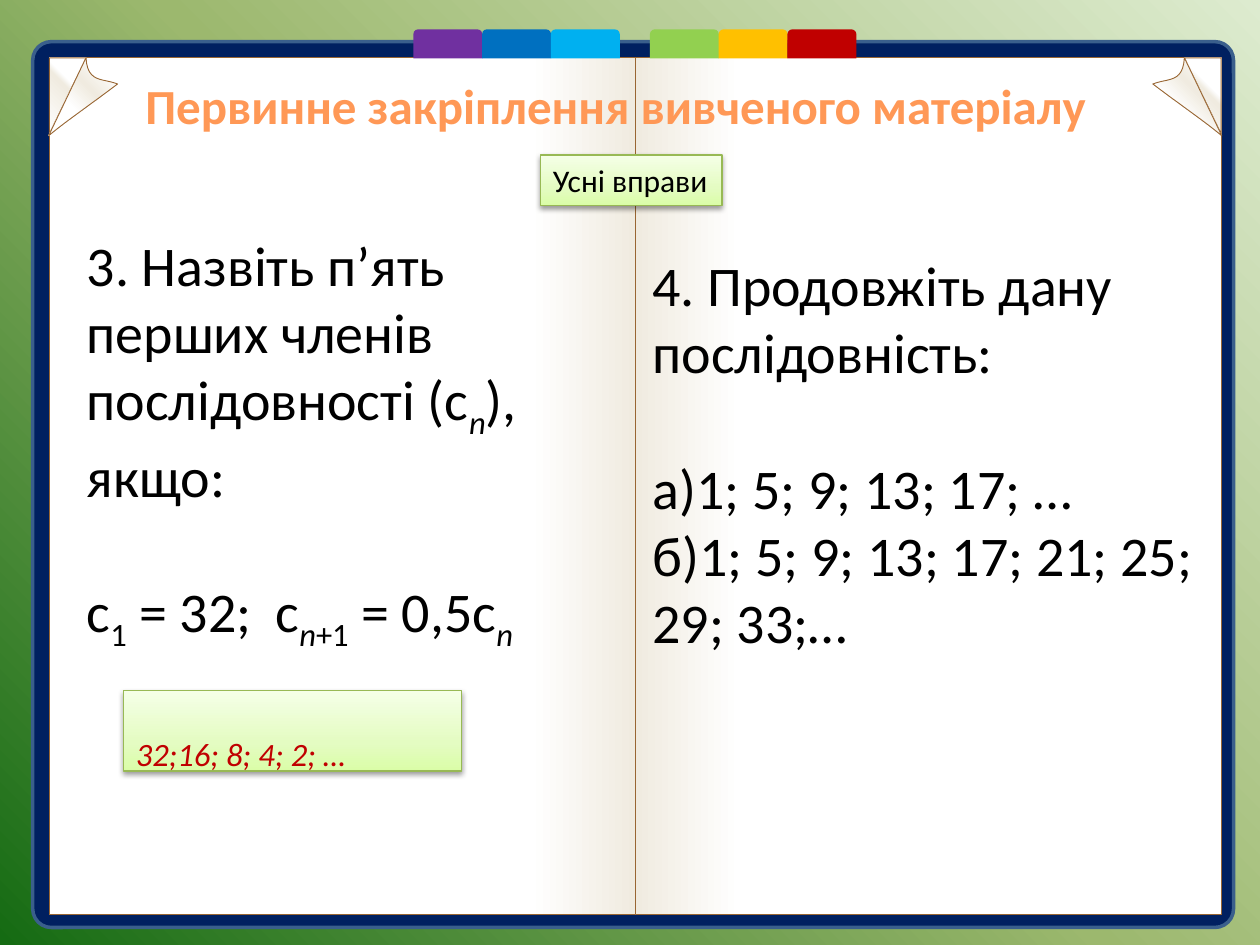
from dataclasses import dataclass

import pptx
import pptx.dml.color
import pptx.enum.shapes
import pptx.enum.text
import pptx.oxml
import pptx.oxml.ns
import pptx.util
from lxml import etree

Pt = pptx.util.Pt
RGB = pptx.dml.color.RGBColor.from_string
SHAPE = pptx.enum.shapes.MSO_SHAPE
ALIGN = pptx.enum.text.PP_ALIGN
ANCHOR = pptx.enum.text.MSO_ANCHOR
AUTO = pptx.enum.text.MSO_AUTO_SIZE
qn = pptx.oxml.ns.qn


@dataclass(frozen=True)
class Theme:
    font: str = "Calibri"
    title_size: float = 28
    body_size: float = 32
    badge_size: float = 18
    gap: float = 39
    title: str = "FF9856"
    text: str = "000000"
    answer: str = "C00000"
    cover: str = "002060"
    cover_line: str = "3A5F8C"
    page_line: str = "996633"
    badge_line: str = "98B955"
    backdrop: tuple = ((0, "DDEBCF"), (50, "9CB86E"), (100, "156B13"))
    page: tuple = ((0, "FFFFFF"), (82, "FFFFFF"), (100, "F0EBE0"))
    corner: tuple = ((0, "FFFFFF"), (57, "F0EBE0"), (65, "FFFFFF"))
    fold: tuple = ((12, "FFFFFF"), (40, "F0EBE0"), (65, "FFFFFF"))
    badge: tuple = ((0, "DAFDA7"), (35, "E4FCC2"), (100, "F5FFE7"))
    tabs: tuple = (("7030A0", "0070C0", "00B0F0"), ("92D050", "FFC000", "C00000"))


T = Theme()
SPINE = 363


def set_gradient(owner, fill, stops, angle):
    fill.gradient()
    grad = owner.element.find(".//" + qn("a:gradFill"))
    gs_list = grad.find(qn("a:gsLst"))
    for gs in list(gs_list):
        gs_list.remove(gs)
    for pos, color in stops:
        gs = etree.SubElement(gs_list, qn("a:gs"), pos=str(pos * 1000))
        etree.SubElement(gs, qn("a:srgbClr"), val=color)
    grad.find(qn("a:lin")).set("ang", str(angle * 60000))


def style(sp, fill, line=None, width=0.5, angle=0):
    sp.shadow.inherit = False
    if isinstance(fill, str):
        sp.fill.solid()
        sp.fill.fore_color.rgb = RGB(fill)
    else:
        set_gradient(sp, sp.fill, fill, angle)
    if line:
        sp.line.color.rgb = RGB(line)
        sp.line.width = Pt(width)
    else:
        sp.line.fill.background()


def add_box(shapes, kind, box, fill, line=None, width=0.5, angle=0):
    sp = shapes.add_shape(kind, *map(Pt, box))
    style(sp, fill, line, width, angle)
    return sp


def add_outline(s, points, fill, angle):
    (x, y), *rest = [(Pt(px), Pt(py)) for px, py in points]
    builder = s.shapes.build_freeform(x, y)
    builder.add_line_segments(rest, close=True)
    style(builder.convert_to_shape(), fill, T.page_line, angle=angle)


def mirror(points):
    return [(2 * SPINE - x, y) for x, y in points]


def curve(a, b, c, d, steps=12):
    weights = [((1 - t) ** 3, 3 * t * (1 - t) ** 2, 3 * t * t * (1 - t), t ** 3)
               for t in (i / steps for i in range(steps + 1))]
    return [tuple(sum(w * p[k] for w, p in zip(ws, (a, b, c, d))) for k in (0, 1))
            for ws in weights]


def set_font(p, size, color, bold=None, italic=None):
    f = p.font
    f.name, f.size, f.bold, f.italic = T.font, Pt(size), bold, italic
    f.color.rgb = RGB(color)


def add_runs(p, runs):
    for text, marks in runs:
        r = p.add_run()
        r.text = text
        if "i" in marks:
            r.font.italic = True
        if "_" in marks:
            r._r.get_or_add_rPr().set("baseline", "-25000")


def add_column(s, box, paragraphs):
    tf = s.shapes.add_textbox(*map(Pt, box)).text_frame
    tf.word_wrap = True
    for i, (runs, before) in enumerate(paragraphs):
        p = tf.paragraphs[0] if i == 0 else tf.add_paragraph()
        if before:
            p.space_before = Pt(before)
        set_font(p, T.body_size, T.text)
        add_runs(p, runs)


def add_badge(s, box, runs, size, color, wrap, italic=None):
    sp = add_box(s.shapes, SHAPE.RECTANGLE, box, T.badge, T.badge_line, 0.75, 270)
    effects = sp.element.spPr.find(qn("a:effectLst"))
    shadow = etree.SubElement(effects, qn("a:outerShdw"), blurRad=str(Pt(3.1)),
                              dist=str(Pt(1.6)), dir="5400000", rotWithShape="0")
    black = etree.SubElement(shadow, qn("a:srgbClr"), val="000000")
    etree.SubElement(black, qn("a:alpha"), val="38000")
    tf = sp.text_frame
    tf.word_wrap = wrap
    tf.vertical_anchor = ANCHOR.TOP
    p = tf.paragraphs[0]
    p.alignment = ALIGN.LEFT
    set_font(p, size, color, italic=italic)
    add_runs(p, runs)


def add_book(s):
    book = s.shapes.add_group_shape().shapes
    cover = add_box(book, SHAPE.ROUNDED_RECTANGLE, (18.7, 23.8, 686.2, 506.2),
                    T.cover, T.cover_line, 2)
    cover.adjustments[0] = 0.021
    for x, angle in ((SPINE - 334.8, 0), (SPINE, 180)):
        add_box(book, SHAPE.RECTANGLE, (x, 33.1, 334.8, 489.6), T.page, T.page_line, angle=angle)


def add_tabs(s):
    for left, colors in zip((236.2, 371.4), T.tabs):
        for i, color in enumerate(colors):
            add_box(s.shapes, SHAPE.ROUND_2_SAME_RECTANGLE,
                    (left + i * 39.3, 16.8, 39.4, 16.6), color)


def add_corners(s):
    corner = [(676.8, 33.1), (697.8, 76.5), (697.8, 33.1)]
    for points in (corner, mirror(corner)):
        add_outline(s, points, T.corner, 315)


def add_folds(s):
    fold = (curve((658.8, 48), (673.2, 59), (689, 69.8), (698.2, 77.6))
            + curve((676.8, 33), (676.1, 47.5), (667.4, 44.6), (658.8, 48)))
    for points in (fold, mirror(fold)):
        add_outline(s, points, T.fold, 135)


def add_title(s, text):
    sp = s.shapes.title
    sp.left, sp.top, sp.width, sp.height = map(Pt, (48.2, 37.4, 607, 45.4))
    tf = sp.text_frame
    tf.auto_size = AUTO.NONE
    tf.vertical_anchor = ANCHOR.MIDDLE
    p = tf.paragraphs[0]
    p.alignment = ALIGN.CENTER
    set_font(p, T.title_size, T.title, bold=True)
    add_runs(p, [(text, "")])
    s.shapes.element.append(sp.element)


def main():
    prs = pptx.Presentation()
    prs.slide_width, prs.slide_height = Pt(720), Pt(540)
    s = prs.slides.add_slide(prs.slide_layouts[5])
    set_gradient(s, s.background.fill, T.backdrop, 135)
    add_book(s)
    add_corners(s)
    add_tabs(s)
    add_title(s, "Первинне закріплення вивченого матеріалу")
    add_folds(s)
    add_column(s, (42.5, 128.2, 300.2, 239.8), [
        ([("3. Назвіть п’ять перших членів послідовності (с", ""), ("n", "i_"),
          ("), якщо:", "")], 0),
        ([("с", ""), ("1", "_"), (" = 32; \tс", ""), ("n", "i_"), ("+1", "_"),
          (" = 0,5с", ""), ("n", "i_")], T.gap),
    ])
    add_badge(s, (308.9, 88.6, 103.7, 28.8), [("Усні вправи", "")],
              T.badge_size, T.text, False)
    add_column(s, (365.8, 139.7, 326.2, 317.5), [
        ([("4. Продовжіть дану послідовність:", "")], 0),
        ([("а)1; 5; 9; 13; 17; …", "")], T.gap),
        ([("б)1; 5; 9; 13; 17; 21; 25; 29; 33;…", "")], 0),
    ])
    add_badge(s, (70.6, 394.6, 193, 46.1), [("32;16; 8; 4; 2; …", "_")],
              T.body_size, T.answer, True, True)
    prs.save("out.pptx")


if __name__ == "__main__":
    main()
